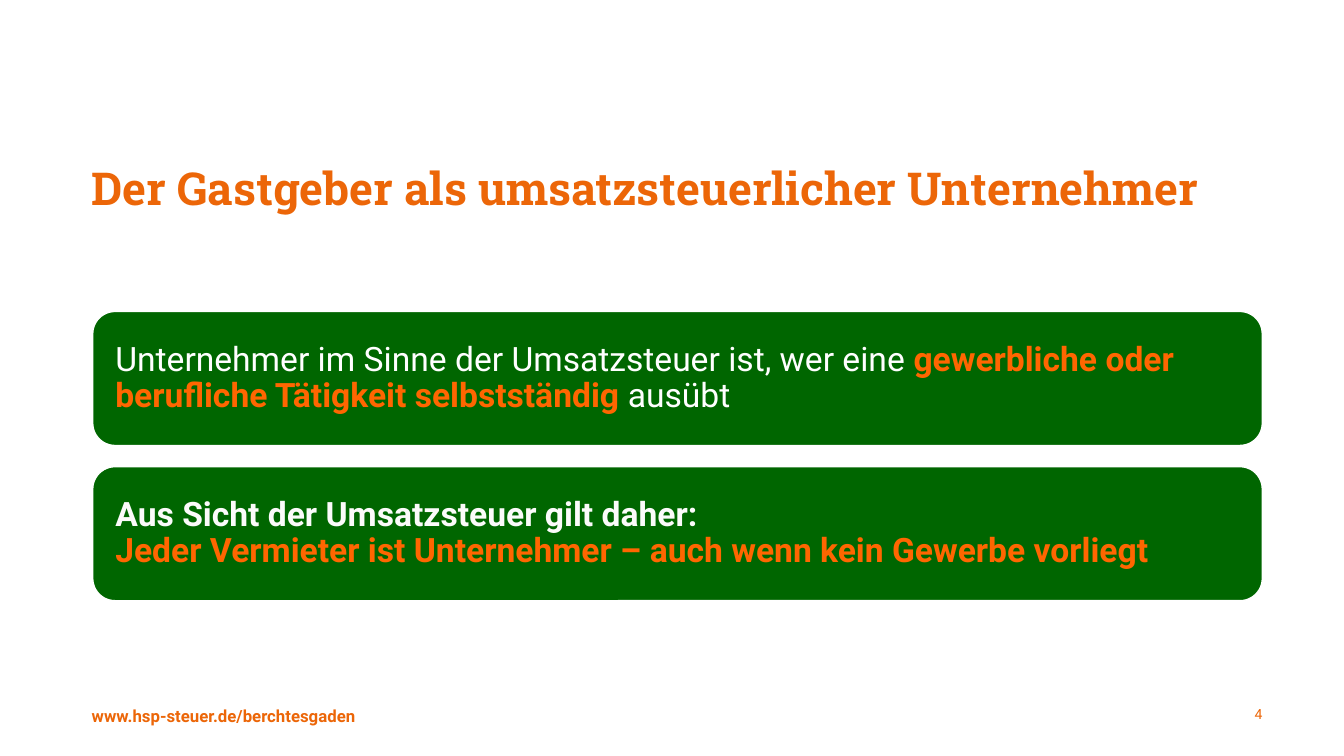
"""Build the slide on hosts as entrepreneurs for VAT purposes."""
import pptx
import pptx.dml.color
import pptx.enum.shapes
import pptx.enum.text
import pptx.util

Inches = pptx.util.Inches
Pt = pptx.util.Pt
RGBColor = pptx.dml.color.RGBColor
Align = pptx.enum.text.PP_ALIGN
Anchor = pptx.enum.text.MSO_ANCHOR

ORANGE = RGBColor(0xEC, 0x66, 0x08)
HIGHLIGHT = RGBColor(0xFF, 0x66, 0x00)
GREEN = RGBColor(0x00, 0x66, 0x00)
WHITE = RGBColor(0xFF, 0xFF, 0xFF)
OFF_WHITE = RGBColor(0xFB, 0xFB, 0xFA)


class HostSlide:
    body_font = "Roboto"
    title_font = "Roboto Slab"

    def __init__(self, presentation):
        self.slide = presentation.slides.add_slide(presentation.slide_layouts[5])

    def set_frame(self, frame, left_margin, anchor=Anchor.TOP):
        frame.word_wrap = True
        frame.auto_size = pptx.enum.text.MSO_AUTO_SIZE.NONE
        frame.vertical_anchor = anchor
        frame.margin_left = Inches(left_margin)
        frame.margin_right = Inches(0.1)
        frame.margin_top = frame.margin_bottom = Inches(0.05)

    def set_font(self, font, name, size, color=None, bold=None):
        font.name = name
        font.size = Pt(size)
        if color is not None:
            font.color.rgb = color
        font.bold = bold

    def title(self, text, left, top, width, height):
        shape = self.slide.shapes.title
        shape.left, shape.top = Inches(left), Inches(top)
        shape.width, shape.height = Inches(width), Inches(height)
        self.set_frame(shape.text_frame, 0)
        shape.text_frame.text = text
        paragraph = shape.text_frame.paragraphs[0]
        paragraph.alignment = Align.LEFT
        self.set_font(paragraph.font, self.title_font, 32.4, ORANGE, True)

    def footer(self, text, left, width, height, size, bold=False, align=Align.LEFT):
        shape = self.slide.shapes.add_textbox(
            Inches(left), Inches(6.95), Inches(width), Inches(height))
        self.set_frame(shape.text_frame, 0)
        shape.text_frame.text = text
        paragraph = shape.text_frame.paragraphs[0]
        paragraph.alignment = align
        self.set_font(paragraph.font, self.body_font, size, ORANGE, bold)

    def card(self, top, lines):
        shape = self.slide.shapes.add_shape(
            pptx.enum.shapes.MSO_SHAPE.ROUNDED_RECTANGLE,
            Inches(0.92), Inches(top), Inches(11.6), Inches(1.33))
        shape.shadow.inherit = False
        shape.fill.solid()
        shape.fill.fore_color.rgb = GREEN
        shape.line.color.rgb = WHITE
        shape.line.width = Pt(1)
        self.set_frame(shape.text_frame, 0.16, Anchor.MIDDLE)
        paragraph = shape.text_frame.paragraphs[0]
        paragraph.alignment = Align.LEFT
        paragraph.line_spacing = 0.9
        self.set_font(paragraph.font, self.body_font, 24)
        for index, line in enumerate(lines):
            if index:
                paragraph.add_line_break()
            for text, color, bold in line:
                run = paragraph.add_run()
                run.text = text
                self.set_font(run.font, self.body_font, 24, color, bold)


def main():
    presentation = pptx.Presentation()
    presentation.slide_width = Inches(13.33)
    presentation.slide_height = Inches(7.5)

    host = HostSlide(presentation)
    host.title("Der Gastgeber als umsatzsteuerlicher Unternehmer", 0.91, 1.54, 11.61, 0.83)
    cards = [
        [[("Unternehmer im Sinne der Umsatzsteuer ist, wer eine ", WHITE, False),
          ("gewerbliche oder berufliche Tätigkeit selbstständig ", HIGHLIGHT, True),
          ("ausübt", WHITE, False)]],
        [[("Aus Sicht der Umsatzsteuer gilt daher:", OFF_WHITE, True)],
         [("Jeder Vermieter ist Unternehmer – auch wenn kein Gewerbe vorliegt",
           HIGHLIGHT, True)]],
    ]
    for index, lines in enumerate(cards):
        host.card(3.09 + index * 1.54, lines)
    host.footer("www.hsp-steuer.de/berchtesgaden", 0.91, 3.84, 0.3, 12, bold=True)
    host.footer("4", 9.52, 3.1, 0.4, 10, align=Align.RIGHT)

    presentation.save("out.pptx")


if __name__ == "__main__":
    main()
